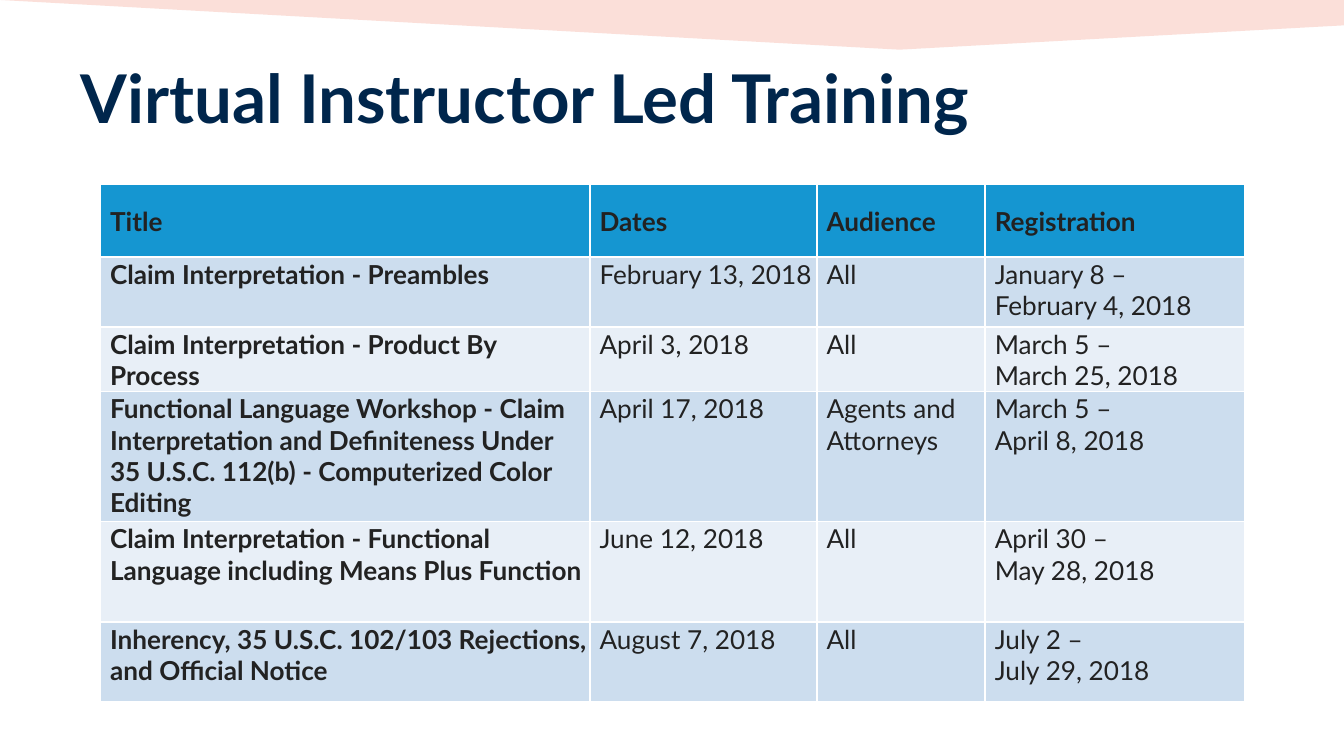
from lxml import etree
from pptx import Presentation, util as u
from pptx.dml.color import RGBColor
from pptx.enum import text
from pptx.oxml.ns import qn

Cm = u.Cm
FONT = "Lato"
NAVY, INK, BLUE, ORANGE = "00264C", "222222", "1596D1", "EA2D00"
BANDS = ("CCDDEE", "E8EFF7")

COL_WIDTHS = (9.25, 4.29, 3.18, 4.9)
ROW_HEIGHTS = (1.37, 1.32, 1.22, 2.46, 1.9, 1.5)
HEADER = ("Title", "Dates", "Audience", "Registration")
COURSES = (
    ("Claim Interpretation - Preambles",
     "February 13, 2018", "All", "January 8 –\nFebruary 4, 2018"),
    ("Claim Interpretation - Product By Process",
     "April 3, 2018", "All", "March 5 –\nMarch 25, 2018"),
    ("Functional Language Workshop - Claim Interpretation and Definiteness "
     "Under 35 U.S.C. 112(b) - Computerized Color Editing",
     "April 17, 2018", "Agents and Attorneys", "March 5 –\nApril 8, 2018"),
    ("Claim Interpretation - Functional Language including Means Plus Function",
     "June 12, 2018", "All", "April 30 –\nMay 28, 2018"),
    ("Inherency, 35 U.S.C. 102/103 Rejections, and Official Notice",
     "August 7, 2018", "All", "July 2 –\nJuly 29, 2018"),
)


def rgb(value):
    return RGBColor.from_string(value)


def write(tf, content, size=14, color=INK, bold=False):
    tf.word_wrap = True
    tf.text = content
    for p in tf.paragraphs:
        for r in p.runs:
            r.font.name = FONT
            r.font.size = u.Pt(size)
            r.font.bold = bold
            r.font.color.rgb = rgb(color)


def add_banner(s, points, color, opacity):
    (x, y), *rest = [(Cm(a), Cm(b)) for a, b in points]
    builder = s.shapes.build_freeform(x, y)
    builder.add_line_segments(rest, close=True)
    sp = builder.convert_to_shape()
    sp.shadow.inherit = False
    sp.line.fill.background()
    sp.fill.solid()
    sp.fill.fore_color.rgb = rgb(color)
    clr = sp.fill._xPr.find(qn("a:solidFill"))[0]
    etree.SubElement(clr, qn("a:alpha"), val=str(opacity * 1000))


def add_title(s, content):
    sp = s.shapes.add_textbox(Cm(1.27), Cm(0.94), Cm(22.86), Cm(2.21))
    write(sp.text_frame, content, size=36, color=NAVY, bold=True)


def fill_cell(cell, content, fill, **fmt):
    cell.margin_left = Cm(0.18)
    cell.margin_top = cell.margin_right = Cm(0.03)
    cell.margin_bottom = 0
    cell.fill.solid()
    cell.fill.fore_color.rgb = rgb(fill)
    write(cell.text_frame, content, **fmt)


def add_schedule(s):
    rows = (HEADER, *COURSES)
    table = s.shapes.add_table(
        len(rows), len(HEADER), Cm(1.9), Cm(3.49),
        Cm(sum(COL_WIDTHS)), Cm(sum(ROW_HEIGHTS))).table
    for col, width in zip(table.columns, COL_WIDTHS):
        col.width = Cm(width)
    for i, (values, height) in enumerate(zip(rows, ROW_HEIGHTS)):
        table.rows[i].height = Cm(height)
        fill = BANDS[(i - 1) % 2] if i else BLUE
        for j, value in enumerate(values):
            cell = table.cell(i, j)
            fill_cell(cell, value, fill, bold=i == 0 or j == 0)
            if i == 0:
                cell.vertical_anchor = text.MSO_ANCHOR.MIDDLE


def main():
    prs = Presentation()
    prs.slide_width, prs.slide_height = Cm(25.4), Cm(14.29)
    s = prs.slides.add_slide(prs.slide_layouts[6])
    add_banner(s, ((0, 0), (25.4, 0), (25.4, 0.48), (17, 0.94)), ORANGE, 15)
    add_title(s, "Virtual Instructor Led Training")
    add_schedule(s)
    prs.save("out.pptx")


if __name__ == "__main__":
    main()
